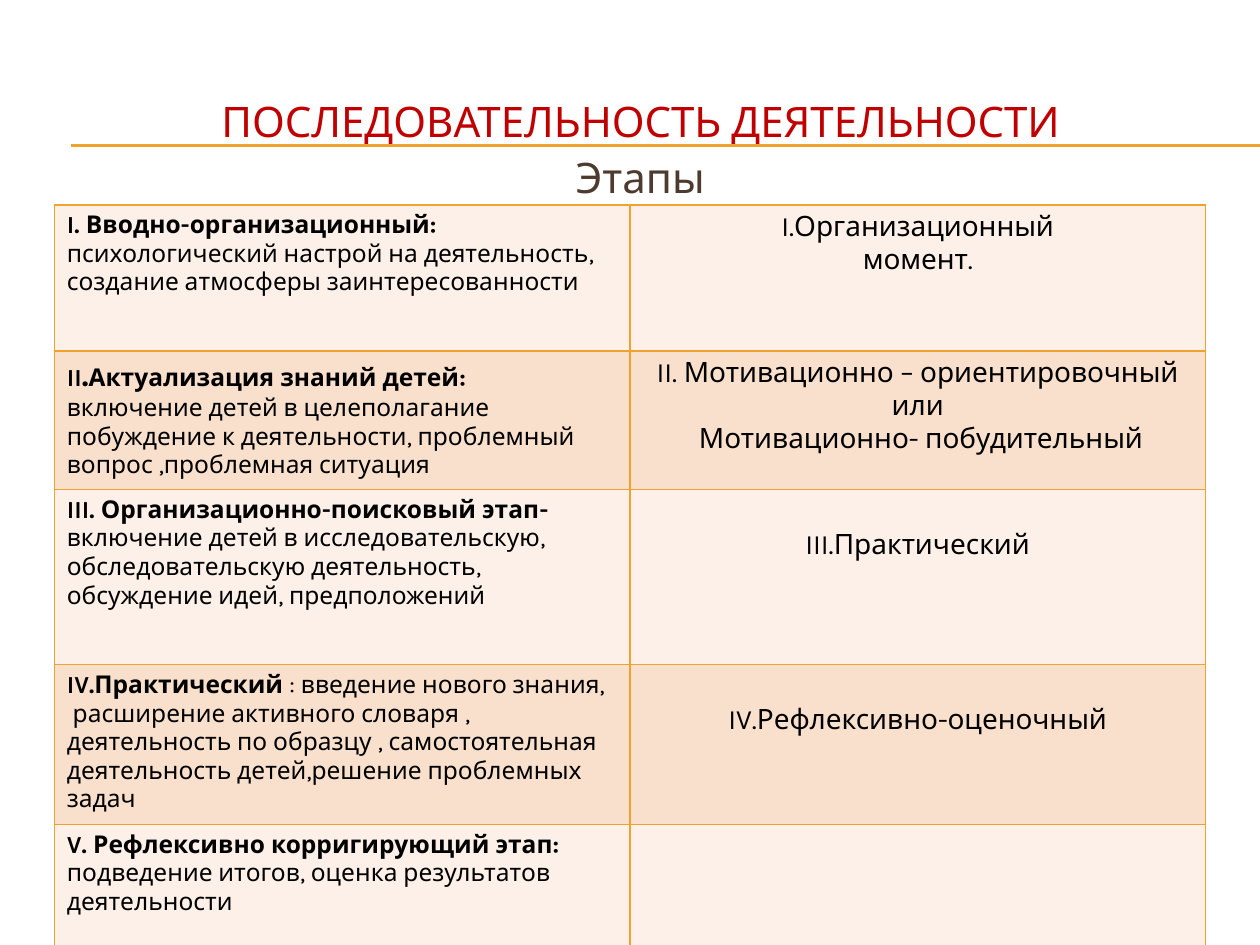
from lxml.etree import SubElement
from pptx import Presentation
from pptx.dml.color import RGBColor
from pptx.enum.text import MSO_ANCHOR, PP_ALIGN
from pptx.oxml.ns import qn
from pptx.util import Pt

FONT = "Karla"
GOLD = RGBColor(0xF0, 0xA2, 0x2E)
RED = RGBColor(0xC0, 0x00, 0x00)
BROWN = RGBColor(0x4E, 0x3B, 0x30)
BLACK = RGBColor(0x00, 0x00, 0x00)
BANDS = [RGBColor(0xFC, 0xF0, 0xE8), RGBColor(0xF9, 0xE0, 0xCD)]

ROW_HEIGHTS = [83.5, 79.2, 100.1, 74.9, 69.8]
COLUMN_WIDTH = 329
BOLD = {"bold": True}

STAGES = [
    [
        [("I. Вводно-организационный:", BOLD)],
        [("психологический настрой на деятельность, создание атмосферы заинтересованности", {})],
    ],
    [
        [("II", BOLD), (".", {"bold": True, "size": 18}), ("Актуализация знаний детей:", BOLD)],
        [("включение детей в целеполагание", {})],
        [("побуждение к деятельности, проблемный вопрос ,проблемная ситуация", {})],
    ],
    [
        [("III. Организационно-поисковый этап-", BOLD)],
        [("включение детей в исследовательскую, обследовательскую деятельность,", {})],
        [("обсуждение идей, предположений", {})],
    ],
    [
        [("IV.Практический ", BOLD), (": введение нового знания,", {})],
        [(" расширение активного словаря , деятельность по образцу , "
          "самостоятельная деятельность детей,решение проблемных задач", {})],
    ],
    [
        [("V. Рефлексивно корригирующий этап: ", BOLD),
         ("подведение итогов, оценка результатов деятельности", {})],
    ],
]

SHORT_STAGES = [
    ["I.Организационный", "момент."],
    ["II. Мотивационно – ориентировочный", "или", " Мотивационно- побудительный"],
    ["III.Практический"],
    ["IV.Рефлексивно-оценочный"],
    [],
]


def write(para, text, size=14, color=BLACK, bold=False, align=PP_ALIGN.LEFT):
    para.alignment = align
    span = para.add_run()
    span.text = text
    span.font.name = FONT
    span.font.size = Pt(size)
    span.font.bold = bold
    span.font.color.rgb = color


def write_lines(frame, lines, **shared):
    for index, spans in enumerate(lines):
        para = frame.add_paragraph() if index else frame.paragraphs[0]
        for text, options in spans:
            write(para, text, **{**shared, **options})


def add_rule(page, top):
    rule = page.shapes.add_connector(1, Pt(40.5), Pt(top), Pt(720), Pt(top))
    rule.line.color.rgb = GOLD
    rule.line.width = Pt(0.75)
    SubElement(rule._element.spPr, qn("a:effectLst"))


def add_title(page, text):
    title = page.shapes.title
    title.left, title.top, title.width, title.height = Pt(24), Pt(36), Pt(684), Pt(66)
    title.text_frame.vertical_anchor = MSO_ANCHOR.MIDDLE
    write(title.text_frame.paragraphs[0], text, size=24, color=RED, align=PP_ALIGN.CENTER)


def add_subtitle(page, text):
    box = page.shapes.add_textbox(Pt(24), Pt(83), Pt(684), Pt(33))
    box.text_frame.word_wrap = True
    write(box.text_frame.paragraphs[0], text, size=24, color=BROWN, align=PP_ALIGN.CENTER)


def style_cell(cell, fill):
    properties = cell._tc.get_or_add_tcPr()
    for side in ("a:lnL", "a:lnR", "a:lnT", "a:lnB"):
        border = SubElement(properties, qn(side), w=str(Pt(1)))
        paint = SubElement(border, qn("a:solidFill"))
        SubElement(paint, qn("a:srgbClr"), val=str(GOLD))
    cell.fill.solid()
    cell.fill.fore_color.rgb = fill


def add_stage_table(page):
    table = page.shapes.add_table(
        len(STAGES), 2, Pt(31), Pt(117), Pt(2 * COLUMN_WIDTH), Pt(sum(ROW_HEIGHTS))
    ).table
    table.first_row = False
    table.horz_banding = False
    for column in table.columns:
        column.width = Pt(COLUMN_WIDTH)
    for index, height in enumerate(ROW_HEIGHTS):
        table.rows[index].height = Pt(height)
        left, right = table.cell(index, 0), table.cell(index, 1)
        for cell in (left, right):
            style_cell(cell, BANDS[index % 2])
        write_lines(left.text_frame, STAGES[index])
        short_lines = [[(text, {})] for text in SHORT_STAGES[index]]
        write_lines(right.text_frame, short_lines, size=16, align=PP_ALIGN.CENTER)
        if len(short_lines) == 1:
            right.margin_top = Pt(22.5)


def main():
    deck = Presentation()
    deck.slide_width, deck.slide_height = Pt(720), Pt(540)
    page = deck.slides.add_slide(deck.slide_layouts[5])
    for top in (82.8, 83.5):
        add_rule(page, top)
    add_title(page, "ПОСЛЕДОВАТЕЛЬНОСТЬ ДЕЯТЕЛЬНОСТИ")
    add_subtitle(page, "Этапы")
    add_stage_table(page)
    deck.save("out.pptx")


if __name__ == "__main__":
    main()
